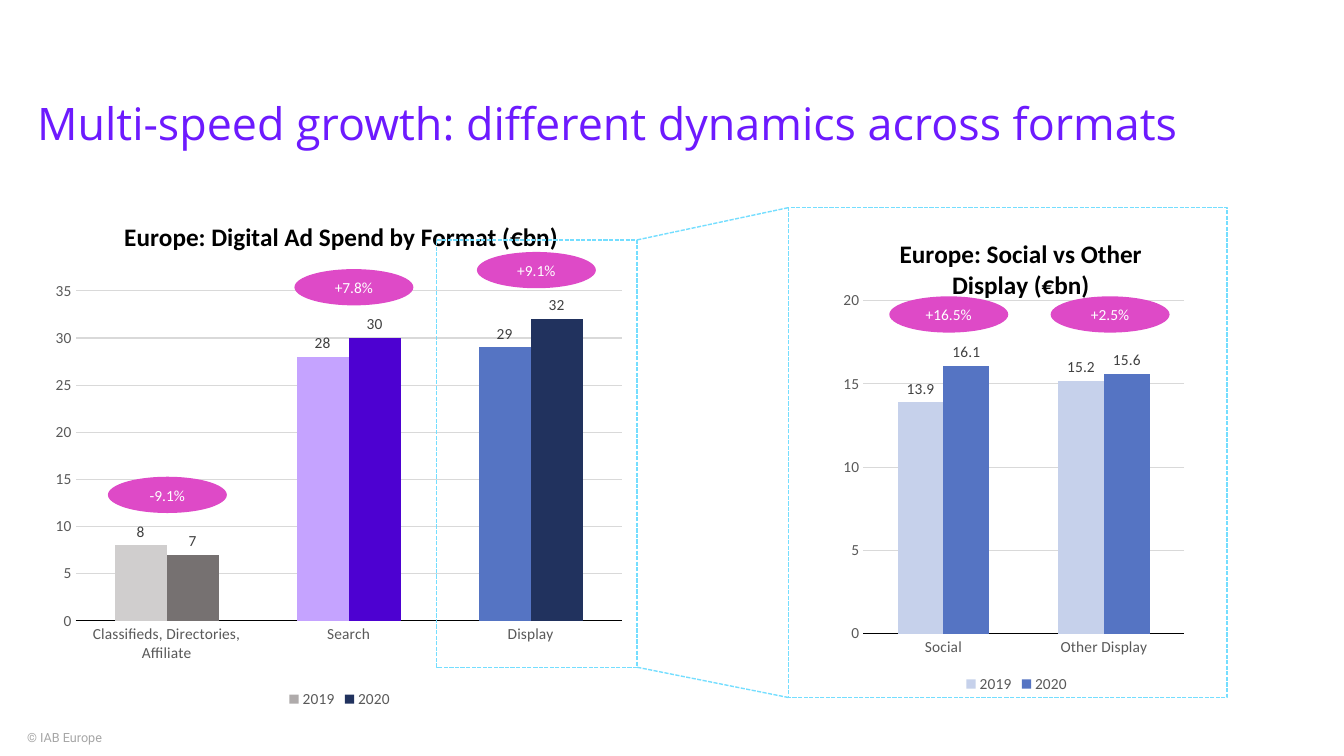
from dataclasses import dataclass, field

from lxml.etree import SubElement
from pptx import Presentation
from pptx.chart.chart import Chart
from pptx.chart.data import CategoryChartData
from pptx.dml.color import RGBColor
from pptx.enum.chart import XL_CHART_TYPE as ChartType
from pptx.enum.chart import XL_LABEL_POSITION as LabelPosition
from pptx.enum.chart import XL_LEGEND_POSITION as LegendPosition
from pptx.enum.chart import XL_TICK_MARK as TickMark
from pptx.enum.dml import MSO_LINE as LineDash
from pptx.enum.shapes import MSO_CONNECTOR as ConnectorType
from pptx.enum.shapes import MSO_SHAPE as ShapeType
from pptx.enum.text import MSO_ANCHOR as Anchor
from pptx.enum.text import PP_ALIGN as Align
from pptx.oxml import parse_xml
from pptx.oxml.ns import nsdecls, qn
from pptx.util import Emu, Pt

PX = 9144  # 100 px to the inch
COLORS = {
    "title": "6D1AFE", "footer": "A6A6A6", "black": "000000", "white": "FFFFFF",
    "axis": "595959", "label": "404040", "grid": "D9D9D9",
    "badge": "DE4AC7", "callout": "74DEFF",
    "grey": "AFABAB", "light_grey": "D0CECE", "dark_grey": "767171",
    "lilac": "C5A3FF", "violet": "4D01D1",
    "pale_blue": "C6D1EB", "blue": "5574C3", "navy": "21325E",
}
BADGE_SIZE = (118, 36)


@dataclass
class Series:
    name: str
    values: list[float]
    color: str
    point_colors: list[str] = field(default_factory=list)


@dataclass
class ChartSpec:
    """title_at and plot hold fractions of the chart's width and height."""
    title: str
    box: tuple[int, int, int, int]
    title_at: tuple[float, float]
    plot: tuple[float, float, float, float]
    categories: list[str]
    series: list[Series]
    axis_maximum: int
    label_format: str


@dataclass
class Badge:
    text: str
    left: int
    top: int


@dataclass
class Label:
    text: str
    box: tuple[int, int, int, int]
    font: str
    size: int
    color: str
    anchor: Anchor
    spacing: float


CHARTS = [
    ChartSpec(
        "Europe: Digital Ad Spend by Format (€bn)", (42, 193, 590, 514),
        (0.13, 0.04), (0.056, 0.186, 0.918, 0.637),
        ["Classifieds, Directories, Affiliate", "Search", "Display"],
        [Series("2019", [8, 28, 29], "grey", ["light_grey", "lilac", "blue"]),
         Series("2020", [7, 30, 32], "navy", ["dark_grey", "violet"])],
        35, "#,##0"),
    ChartSpec(
        "Europe: Social vs Other Display (€bn)", (831, 206, 355, 486),
        (0.16, 0.05), (0.071, 0.19, 0.897, 0.68),
        ["Social", "Other Display"],
        [Series("2019", [13.9, 15.2], "pale_blue"),
         Series("2020", [16.1, 15.6], "blue")],
        20, "#,##0.0"),
]
BADGES = [
    Badge("-9.1%", 107, 473), Badge("+7.8%", 292, 267), Badge("+9.1%", 473, 250),
    Badge("+16.5%", 882, 294), Badge("+2.5%", 1042, 294),
]
LABELS = [
    Label("© IAB Europe", (17, 719, 361, 25), "Roboto", 9, "footer", Anchor.TOP, 1.0),
    Label("Multi-speed growth: different dynamics across formats",
          (27, 74, 1215, 101), "Open Sans", 32, "title", Anchor.MIDDLE, 0.9),
]
DISPLAY_FRAME = (433, 238, 199, 424)
DETAIL_FRAME = (782, 206, 435, 486)


def px(*lengths: int) -> list[Emu]:
    return [Emu(length * PX) for length in lengths]


def rgb(name: str) -> RGBColor:
    return RGBColor.from_string(COLORS[name])


def style_font(font, color: str, size: int, name: str = "Calibri", bold: bool = False) -> None:
    for attribute, value in {"name": name, "size": Pt(size), "bold": bold}.items():
        setattr(font, attribute, value)
    font.color.rgb = rgb(color)


def style_line(line, color: str, width: float, dash=None) -> None:
    line.color.rgb = rgb(color)
    line.width = Pt(width)
    if dash is not None:
        line.dash_style = dash


def set_layout(parent, index: int, fractions: tuple[float, ...], inner: bool = False) -> None:
    """Give a chart part a fixed place, as fractions of the chart."""
    existing = parent.find(qn("c:layout"))
    if existing is not None:
        parent.remove(existing)
    layout = parse_xml(f"<c:layout {nsdecls('c')}><c:manualLayout/></c:layout>")
    settings = [("layoutTarget", "inner")] if inner else []
    settings += [("xMode", "edge"), ("yMode", "edge"), *zip("xywh", fractions)]
    for tag, value in settings:
        SubElement(layout[0], qn(f"c:{tag}")).set("val", str(value))
    parent.insert(index, layout)


def style_axes(chart: Chart, maximum: int) -> None:
    for axis in (chart.category_axis, chart.value_axis):
        axis.major_tick_mark = axis.minor_tick_mark = TickMark.NONE
        style_font(axis.tick_labels.font, "axis", 11)
    style_line(chart.category_axis.format.line, "black", 0.75)
    value_axis = chart.value_axis
    scale = {"minimum_scale": 0, "maximum_scale": maximum, "major_unit": 5}
    for attribute, value in scale.items():
        setattr(value_axis, attribute, value)
    value_axis.tick_labels.number_format = "#,##0"
    value_axis.tick_labels.number_format_is_linked = False
    value_axis.format.line.fill.background()
    style_line(value_axis.major_gridlines.format.line, "grid", 0.75)


def add_column_chart(slide, spec: ChartSpec) -> None:
    data = CategoryChartData()
    data.categories = spec.categories
    for series in spec.series:
        data.add_series(series.name, series.values)
    chart = slide.shapes.add_chart(ChartType.COLUMN_CLUSTERED, *px(*spec.box), data).chart
    style_font(chart.font, "black", 10)

    title = chart.chart_title
    title.text_frame.text = spec.title
    style_font(title.text_frame.paragraphs[0].runs[0].font, "black", 18, bold=True)
    set_layout(title._element, 1, spec.title_at)
    set_layout(chart._chartSpace.chart.plotArea, 0, spec.plot, inner=True)

    chart.has_legend = True
    chart.legend.position = LegendPosition.BOTTOM
    chart.legend.include_in_layout = False
    style_font(chart.legend.font, "axis", 11)
    style_axes(chart, spec.axis_maximum)

    plot = chart.plots[0]
    for attribute, value in {"gap_width": 150, "overlap": 0, "vary_by_categories": False}.items():
        setattr(plot, attribute, value)
    for drawn, series in zip(plot.series, spec.series):
        fills = [(drawn, series.color)]
        fills += [(drawn.points[i], color) for i, color in enumerate(series.point_colors)]
        for part, color in fills:
            part.format.fill.solid()
            part.format.fill.fore_color.rgb = rgb(color)
        label_settings = {"show_value": True, "number_format": spec.label_format,
                          "number_format_is_linked": False,
                          "position": LabelPosition.OUTSIDE_END}
        for attribute, value in label_settings.items():
            setattr(drawn.data_labels, attribute, value)
        style_font(drawn.data_labels.font, "label", 11)


def add_badge(slide, badge: Badge) -> None:
    shape = slide.shapes.add_shape(ShapeType.OVAL, *px(badge.left, badge.top, *BADGE_SIZE))
    shape.shadow.inherit = False
    shape.fill.solid()
    shape.fill.fore_color.rgb = rgb("badge")
    shape.line.fill.background()
    shape.text_frame.vertical_anchor = Anchor.MIDDLE
    paragraph = shape.text_frame.paragraphs[0]
    paragraph.text = badge.text
    paragraph.alignment = Align.CENTER
    style_font(paragraph.runs[0].font, "white", 11)


def add_label(slide, label: Label) -> None:
    frame = slide.shapes.add_textbox(*px(*label.box)).text_frame
    frame.word_wrap = True
    frame.vertical_anchor = label.anchor
    paragraph = frame.paragraphs[0]
    paragraph.text = label.text
    paragraph.line_spacing = label.spacing
    style_font(paragraph.runs[0].font, label.color, label.size, label.font)


def add_callout(slide, source: tuple[int, ...], target: tuple[int, ...]) -> None:
    """Frame two areas and link the facing corners."""
    for box in (source, target):
        frame = slide.shapes.add_shape(ShapeType.RECTANGLE, *px(*box))
        frame.shadow.inherit = False
        frame.fill.background()
        style_line(frame.line, "callout", 1, LineDash.SQUARE_DOT)
    right = source[0] + source[2]
    for start, end in ((source[1], target[1]), (source[1] + source[3], target[1] + target[3])):
        connector = slide.shapes.add_connector(
            ConnectorType.STRAIGHT, *px(right, start, target[0], end))
        style_line(connector.line, "callout", 1, LineDash.SQUARE_DOT)
        SubElement(connector._element.spPr, qn("a:effectLst"))


def main() -> None:
    presentation = Presentation()
    presentation.slide_width, presentation.slide_height = px(1333, 750)
    slide = presentation.slides.add_slide(presentation.slide_layouts[6])
    for label in LABELS:
        add_label(slide, label)
    for spec in CHARTS:
        add_column_chart(slide, spec)
    add_callout(slide, DISPLAY_FRAME, DETAIL_FRAME)
    for badge in BADGES:
        add_badge(slide, badge)
    presentation.save("out.pptx")


if __name__ == "__main__":
    main()
